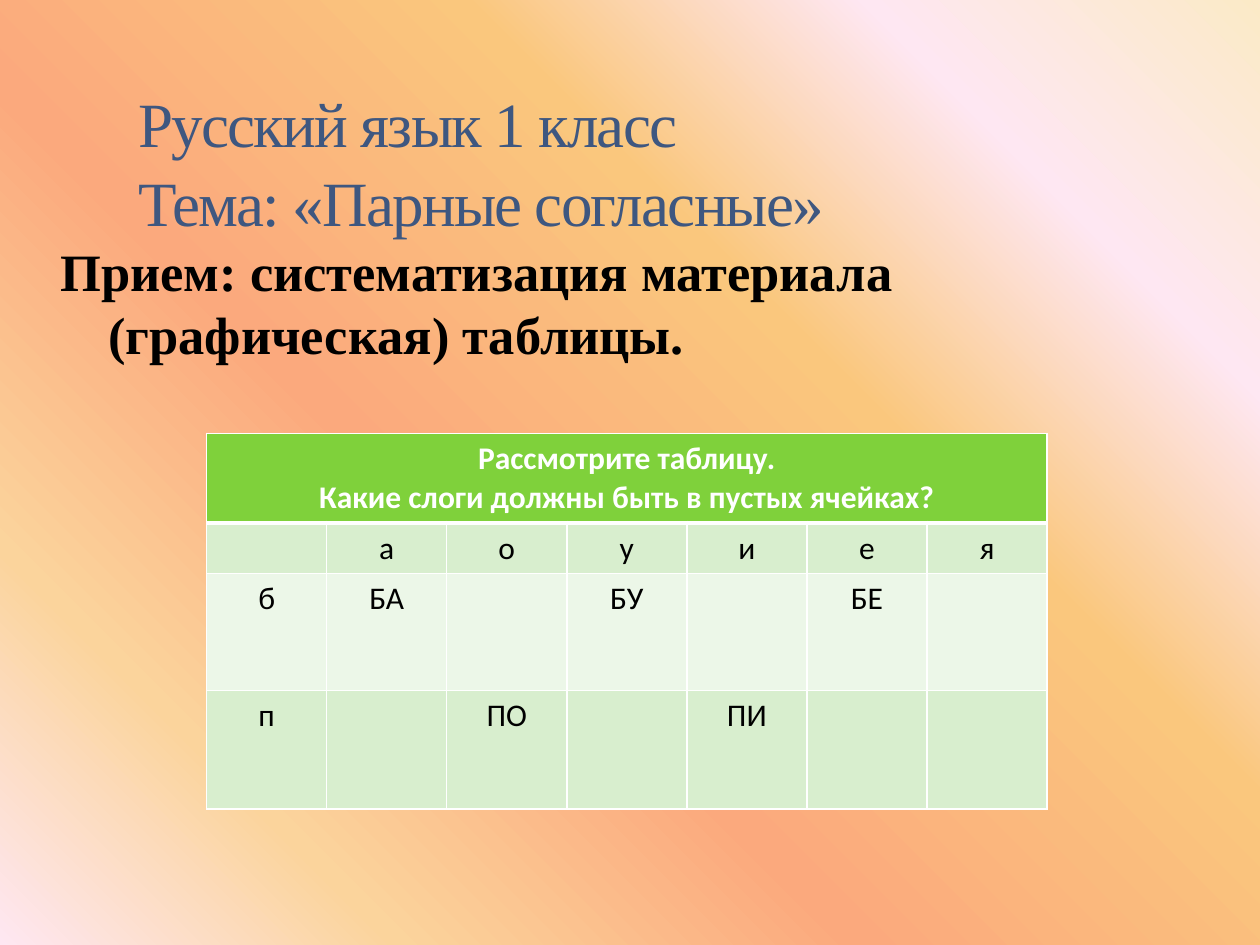
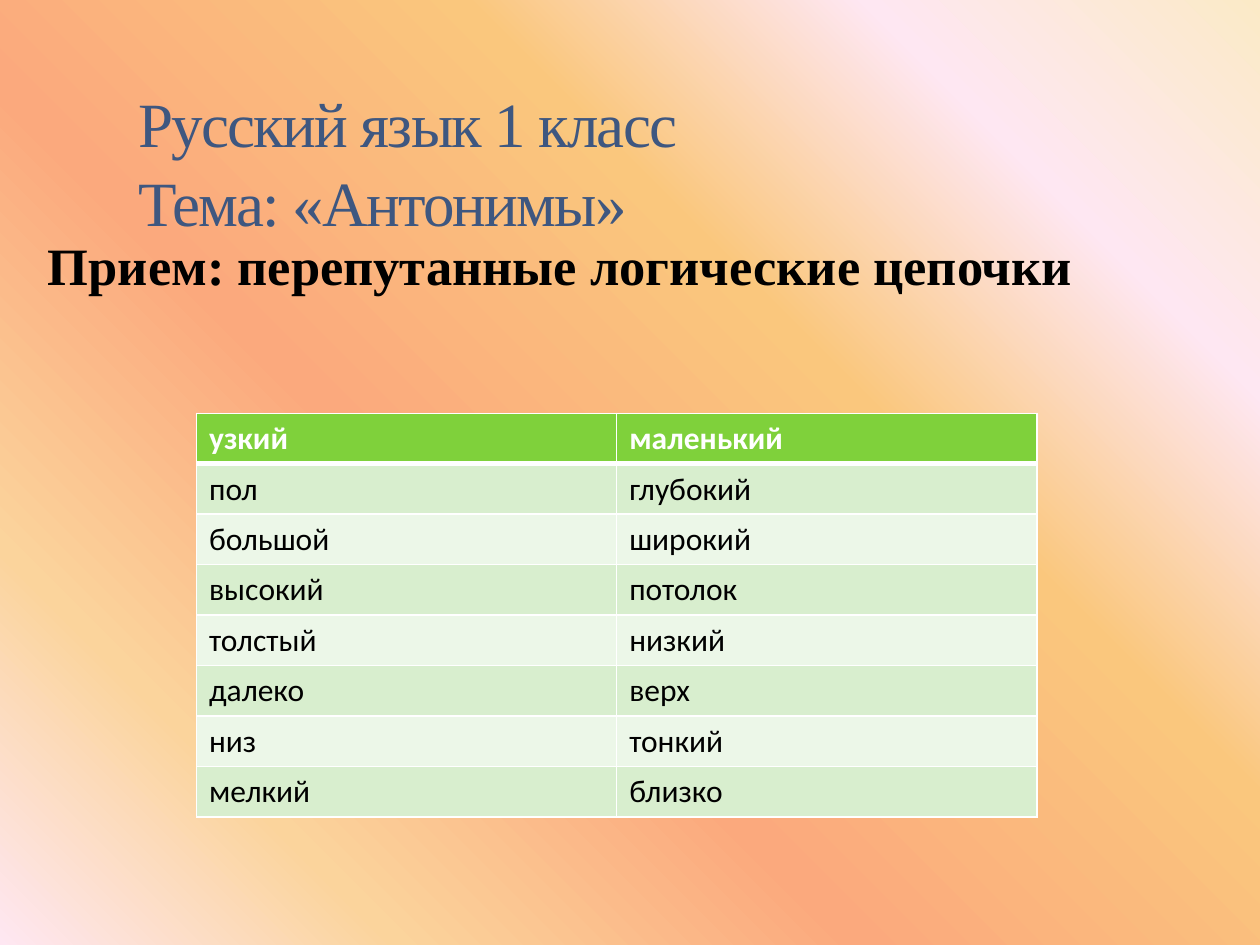
"""Build two Russian-language lesson slides, each with a heading, a method and a table."""
from dataclasses import dataclass

from lxml.etree import SubElement
from pptx import Presentation
from pptx.dml.color import RGBColor as Color
from pptx.enum.text import MSO_ANCHOR as Anchor, PP_ALIGN as Align
from pptx.oxml import parse_xml
from pptx.oxml.ns import nsdecls, qn
from pptx.util import Emu, Inches, Pt

LESSONS = [
    {
        "title": ["Русский язык 1 класс", "Тема: «Парные согласные»"],
        "method": "Прием: систематизация материала (графическая) таблицы.",
        "method_box": (0.31, 1.8, 9.69, 4.95),
        "method_inset": 0.1,
        "table_at": (1.64, 3.44),
        "row_heights": [0.71, 0.4, 0.93, 0.94],
        "align": Align.CENTER,
        "rows": [
            ["Рассмотрите таблицу.\nКакие слоги должны быть в пустых ячейках?"],
            ["", "а", "о", "у", "и", "е", "я"],
            ["б", "БА", "", "БУ", "", "БЕ", ""],
            ["п", "", "ПО", "", "ПИ", "", ""],
        ],
    },
    {
        "title": ["Русский язык 1 класс", "Тема: «Антонимы»"],
        "method": "Прием: перепутанные логические цепочки",
        "method_box": (0, 1.75, 9.5, 4.95),
        "method_inset": 0.31,
        "table_at": (1.56, 3.28),
        "row_heights": [0.4] * 8,
        "align": Align.LEFT,
        "rows": [
            ["узкий", "маленький"],
            ["пол", "глубокий"],
            ["большой", "широкий"],
            ["высокий", "потолок"],
            ["толстый", "низкий"],
            ["далеко", "верх"],
            ["низ", "тонкий"],
            ["мелкий", "близко"],
        ],
    },
]

TITLE_BOX = (1, 0.56, 8.5, 1)
TABLE_WIDTH = 6.67


@dataclass(frozen=True)
class Theme:
    """Colours, fonts and type sizes."""
    serif: str = "Times New Roman"
    sans: str = "Calibri"
    title: str = "3E5780"
    ink: str = "000000"
    white: str = "FFFFFF"
    header: str = "7FD13B"
    bands: tuple = ("ECF7E8", "D8EECE")
    backdrop: tuple = ((0, "FBEAC7"), (18, "FEE7F2"), (36, "FAC77D"),
                       (61, "FBA97D"), (82, "FBD49C"), (100, "FEE7F2"))
    title_size: int = 36
    method_size: int = 30
    cell_size: int = 18
    rule: int = 1
    header_rule: int = 3


THEME = Theme()


def paint_backdrop(master):
    """Give every slide the shared diagonal gradient."""
    fill = master.background.fill
    fill.gradient()
    fill.gradient_angle = 225
    stops = next(master.element.iter(qn("a:gsLst")))
    for stop in list(stops):
        stops.remove(stop)
    for percent, colour in THEME.backdrop:
        stop = SubElement(stops, qn("a:gs"), pos=str(percent * 1000))
        SubElement(stop, qn("a:srgbClr"), val=colour)


def style_text(text_frame, font_name, size, colour, bold=False, align=Align.LEFT):
    """Format every run of a text frame."""
    for paragraph in text_frame.paragraphs:
        paragraph.alignment = align
        for run in paragraph.runs:
            font = run.font
            font.name, font.size, font.bold = font_name, Pt(size), bold
            font.color.rgb = Color.from_string(colour)


def add_text(slide, box, text, inset, top_inset):
    """Add a wrapping text box anchored at the top."""
    shape = slide.shapes.add_textbox(*map(Inches, box))
    text_frame = shape.text_frame
    text_frame.word_wrap = True
    text_frame.vertical_anchor = Anchor.TOP
    text_frame.margin_left = Inches(inset)
    text_frame.margin_top = Inches(top_inset)
    text_frame.text = text
    return shape


def add_title(slide, lines):
    """Add the two-line lesson heading with tightened letters."""
    shape = add_text(slide, TITLE_BOX, "\v".join(lines), 0.1, 0.08)
    style_text(shape.text_frame, THEME.serif, THEME.title_size, THEME.title)
    shape.text_frame.paragraphs[0].line_spacing = 1.05
    for properties in shape.element.iter(qn("a:rPr")):
        properties.set("spc", "-100")


def add_method(slide, lesson):
    """Add the bold method line with a hanging indent."""
    shape = add_text(slide, lesson["method_box"], lesson["method"],
                     lesson["method_inset"], 0.1)
    shape.text_frame.margin_right = Inches(0.3)
    style_text(shape.text_frame, THEME.serif, THEME.method_size, THEME.ink, bold=True)
    for properties in shape.element.iter(qn("a:pPr")):
        properties.set("marL", str(Inches(0.45)))
        properties.set("indent", str(Inches(-0.38)))


def add_borders(frame, column_count):
    """Draw white cell borders, heavier under the header row."""
    for number, properties in enumerate(frame.element.iter(qn("a:tcPr"))):
        row = number // column_count
        heavy_side = {0: "lnB", 1: "lnT"}.get(row)
        for place, side in enumerate(("lnL", "lnR", "lnT", "lnB")):
            width = THEME.header_rule if side == heavy_side else THEME.rule
            properties.insert(place, parse_xml(
                f'<a:{side} {nsdecls("a")} w="{Pt(width)}"><a:solidFill>'
                f'<a:srgbClr val="{THEME.white}"/></a:solidFill></a:{side}>'))


def add_word_table(slide, lesson):
    """Add the banded table; a lone header entry spans all columns."""
    rows, heights = lesson["rows"], lesson["row_heights"]
    column_count = len(rows[-1])
    left, top = lesson["table_at"]
    frame = slide.shapes.add_table(
        len(rows), column_count, Inches(left), Inches(top),
        Inches(TABLE_WIDTH), Inches(sum(heights)))
    table = frame.table
    for column in table.columns:
        column.width = Emu(Inches(TABLE_WIDTH) // column_count)
    for row_index, (words, height) in enumerate(zip(rows, heights)):
        table.rows[row_index].height = Inches(height)
        is_header = row_index == 0
        fill = THEME.header if is_header else THEME.bands[row_index % 2]
        colour = THEME.white if is_header else THEME.ink
        for column_index in range(column_count):
            cell = table.cell(row_index, column_index)
            cell.fill.solid()
            cell.fill.fore_color.rgb = Color.from_string(fill)
            if column_index < len(words):
                cell.text_frame.text = words[column_index]
                style_text(cell.text_frame, THEME.sans, THEME.cell_size, colour,
                           is_header, lesson["align"])
        if len(words) == 1:
            table.cell(row_index, 0).merge(table.cell(row_index, column_count - 1))
    add_borders(frame, column_count)


def main():
    """Create and save the presentation."""
    presentation = Presentation()
    presentation.slide_width = Inches(10)
    presentation.slide_height = Inches(7.5)
    paint_backdrop(presentation.slide_master)
    for lesson in LESSONS:
        slide = presentation.slides.add_slide(presentation.slide_layouts[6])
        add_title(slide, lesson["title"])
        add_method(slide, lesson)
        add_word_table(slide, lesson)
    presentation.save("out.pptx")


if __name__ == "__main__":
    main()
